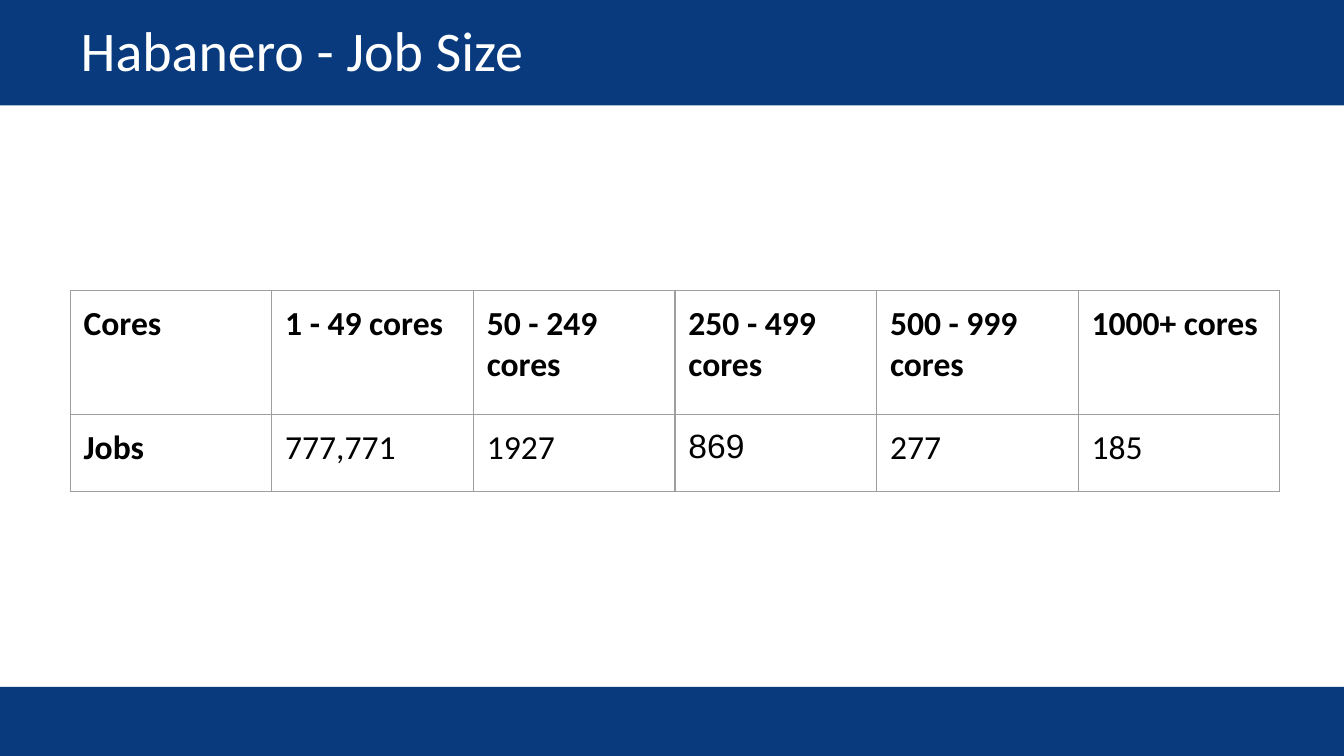
from lxml import etree
from pptx import Presentation
from pptx.dml.color import RGBColor
from pptx.enum.shapes import MSO_SHAPE
from pptx.enum.text import MSO_ANCHOR, PP_ALIGN
from pptx.oxml.ns import qn
from pptx.util import Pt

RECTANGLE = MSO_SHAPE.RECTANGLE
MIDDLE = MSO_ANCHOR.MIDDLE
LEFT = PP_ALIGN.LEFT

PAGE_WIDTH, PAGE_HEIGHT = 720, 405
TITLE_ONLY = 5
INSET = Pt(7.2)
MARGINS = {f"margin_{side}": INSET for side in ("left", "top", "right", "bottom")}

NAVY, WHITE, BLACK, GREY = "083A7D", "FFFFFF", "000000", "9E9E9E"

COLUMN_WIDTH = 108
ROW_HEIGHTS = [66.4, 41.5]
JOB_SIZES = [
    ["Cores", "1 - 49 cores", "50 - 249 cores", "250 - 499 cores",
     "500 - 999 cores", "1000+ cores"],
    ["Jobs", "777,771", "1927", "869", "277", "185"],
]
ARIAL_CELL = (1, 3)


def color(value):
    return RGBColor.from_string(value)


def apply_format(target, values):
    for name, value in values.items():
        setattr(target, name, value)


def write(frame, text, ink, **font):
    para = frame.paragraphs[0]
    para.alignment = LEFT
    span = para.add_run()
    span.text = text
    apply_format(span.font, font)
    span.font.color.rgb = color(ink)


def add_band(page, top, height):
    band = page.shapes.add_shape(RECTANGLE, 0, Pt(top), Pt(PAGE_WIDTH), Pt(height))
    band.shadow.inherit = False
    band.fill.solid()
    band.fill.fore_color.rgb = color(NAVY)
    band.line.fill.background()


def add_title(page, text):
    title = page.shapes.title
    apply_format(title, {"left": Pt(36), "top": Pt(2.2),
                         "width": Pt(648), "height": Pt(48.2)})
    frame = title.text_frame
    apply_format(frame, {**MARGINS, "vertical_anchor": MIDDLE, "word_wrap": True})
    write(frame, text, WHITE, name="Calibri", size=Pt(30))
    # Bring the title in front of the bands
    title.element.getparent().append(title.element)


def add_borders(cell):
    properties = cell._tc.get_or_add_tcPr()
    for position, side in enumerate(("lnL", "lnR", "lnT", "lnB")):
        line = etree.Element(qn(f"a:{side}"), w=str(Pt(0.75)))
        fill = etree.SubElement(line, qn("a:solidFill"))
        etree.SubElement(fill, qn("a:srgbClr"), val=GREY)
        properties.insert(position, line)


def add_job_table(page, left, top):
    columns = len(JOB_SIZES[0])
    table = page.shapes.add_table(
        len(JOB_SIZES), columns, Pt(left), Pt(top),
        Pt(columns * COLUMN_WIDTH), Pt(sum(ROW_HEIGHTS))).table
    apply_format(table, {"first_row": False, "horz_banding": False})
    for column in table.columns:
        column.width = Pt(COLUMN_WIDTH)
    for row, height in zip(table.rows, ROW_HEIGHTS):
        row.height = Pt(height)

    for r, texts in enumerate(JOB_SIZES):
        for c, text in enumerate(texts):
            cell = table.cell(r, c)
            apply_format(cell, MARGINS)
            cell.fill.background()
            add_borders(cell)
            write(cell.text_frame, text, BLACK, size=Pt(18),
                  name="Arial" if (r, c) == ARIAL_CELL else "Calibri",
                  bold=r == 0 or c == 0)


def main():
    deck = Presentation()
    deck.slide_width, deck.slide_height = Pt(PAGE_WIDTH), Pt(PAGE_HEIGHT)
    page = deck.slides.add_slide(deck.slide_layouts[TITLE_ONLY])

    # Header and footer bands
    add_band(page, -0.5, 57)
    add_band(page, 368, 38)

    # Title and table
    add_title(page, "Habanero - Job Size")
    add_job_table(page, 37.6, 155.6)

    deck.save("out.pptx")


if __name__ == "__main__":
    main()
